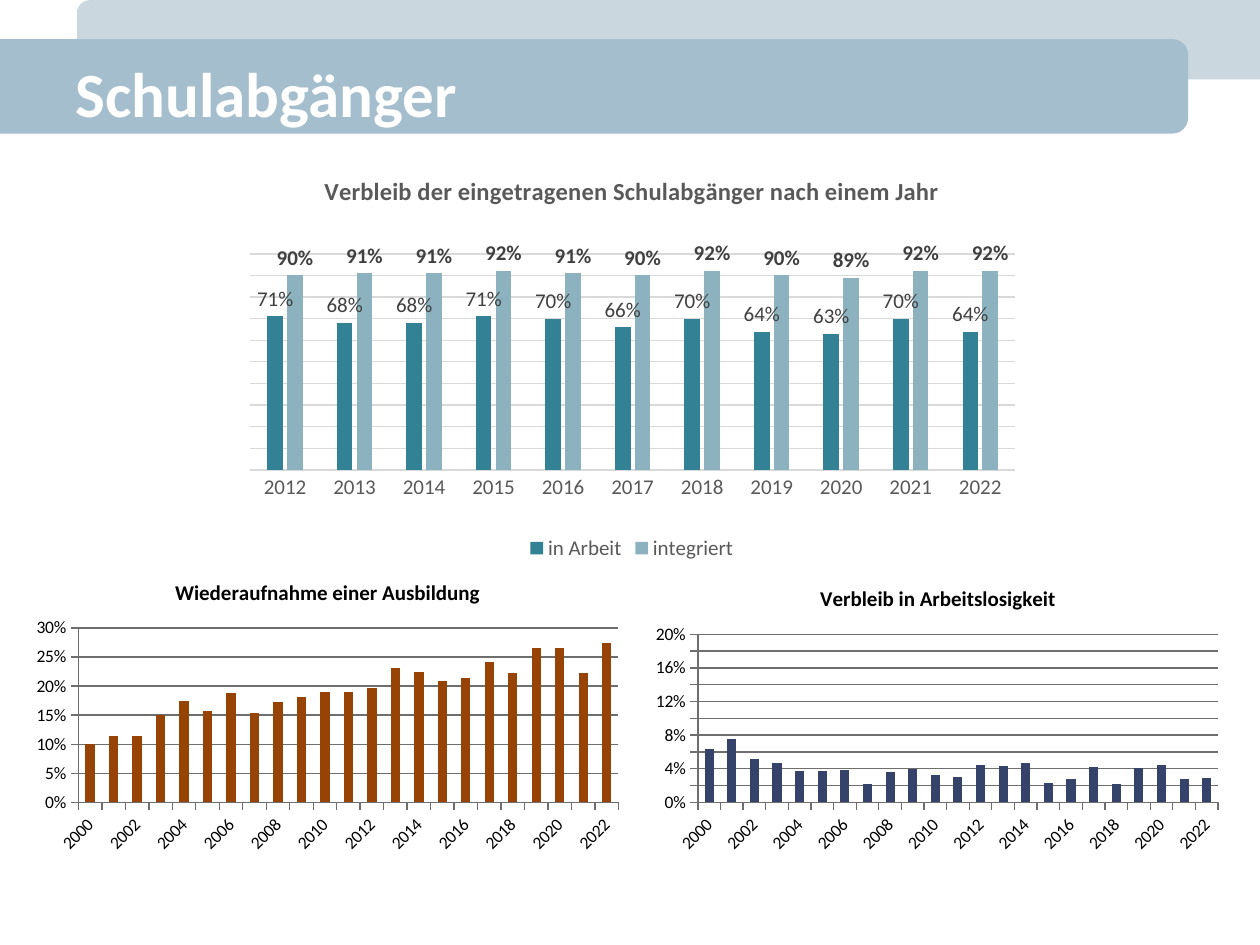
import pptx
import pptx.chart.data
import pptx.dml.color
import pptx.enum.chart
import pptx.enum.shapes
import pptx.enum.text
import pptx.oxml
import pptx.oxml.ns
import pptx.util

COLORS = {
    "banner_back": "8BA8B8", "banner_front": "A4BECD", "white": "FFFFFF",
    "black": "000000", "text": "595959", "label": "404040",
    "grid_light": "D9D9D9", "grid_dark": "6E6E6E",
    "work": "328194", "integrated": "8CB2C0", "training": "964305", "unemployed": "35436A",
}
RGB = {name: pptx.dml.color.RGBColor.from_string(value) for name, value in COLORS.items()}
FONT = "Calibri"
NAMESPACE = pptx.oxml.ns.nsdecls("c")

presentation = pptx.Presentation()
presentation.slide_width = pptx.util.Inches(10)
presentation.slide_height = pptx.util.Inches(7.5)
column = presentation.slide_width / 100
row = presentation.slide_height / 100
slide = presentation.slides.add_slide(presentation.slide_layouts[5])


def write_text(text_frame, text, size, color, bold=True):
    text_frame.text = text
    paragraph = text_frame.paragraphs[0]
    font = paragraph.runs[0].font
    font.name, font.size, font.bold = FONT, pptx.util.Pt(size), bold
    font.color.rgb = RGB[color]
    return paragraph


def add_column_chart(place, plot_place, title, title_size, text_size, text_color, grid_color,
                     years, series_list, gap, overlap, maximum, unit):
    data = pptx.chart.data.CategoryChartData(number_format="0%")
    data.categories = [str(year) for year in years]
    for name, values, fill in series_list:
        data.add_series(name, values)
    left, top, width, height = place
    chart = slide.shapes.add_chart(
        pptx.enum.chart.XL_CHART_TYPE.COLUMN_CLUSTERED,
        int(left * column), int(top * row), int(width * column), int(height * row), data).chart
    chart.font.name, chart.font.size = FONT, pptx.util.Pt(text_size)
    chart.font.color.rgb = RGB[text_color]
    chart.has_legend = False
    chart.has_title = True
    write_text(chart.chart_title.text_frame, title, title_size, text_color)
    chart.chart_title.include_in_layout = False
    plot = chart.plots[0]
    plot.vary_by_categories = False
    plot.gap_width, plot.overlap = gap, overlap
    for series, (name, values, fill) in zip(plot.series, series_list):
        series.format.fill.solid()
        series.format.fill.fore_color.rgb = RGB[fill]
    axis = chart.value_axis
    axis.minimum_scale, axis.maximum_scale, axis.major_unit = 0, maximum, unit
    axis.has_major_gridlines = True
    axis.tick_labels.number_format = "0%"
    axis.tick_labels.number_format_is_linked = False
    for line in (axis.major_gridlines.format.line, axis.format.line, chart.category_axis.format.line):
        line.color.rgb = RGB[grid_color]
        line.width = pptx.util.Pt(0.75)
    edges = "".join(f'<c:{tag} val="{share / 100}"/>' for tag, share in zip("xywh", plot_place))
    layout = pptx.oxml.parse_xml(
        f'<c:layout {NAMESPACE}><c:manualLayout><c:layoutTarget val="inner"/>'
        f'<c:xMode val="edge"/><c:yMode val="edge"/>{edges}</c:manualLayout></c:layout>')
    plot_area = chart._chartSpace.chart.plotArea
    for old_layout in plot_area.findall(pptx.oxml.ns.qn("c:layout")):
        plot_area.remove(old_layout)
    plot_area.insert(0, layout)
    return chart


for left, top, width, height, rotation, fill, opacity in (
        (50, -58.53, 6.3, 125.47, 270, "banner_back", 45),
        (43.4, -53.73, 7.5, 125.73, 90, "banner_front", 100)):
    banner = slide.shapes.add_shape(
        pptx.enum.shapes.MSO_SHAPE.ROUND_2_SAME_RECTANGLE,
        int(left * column), int(top * row), int(width * column), int(height * row))
    banner.rotation = rotation
    banner.shadow.inherit = False
    banner.line.fill.background()
    banner.fill.solid()
    banner.fill.fore_color.rgb = RGB[fill]
    if opacity < 100:
        color_element = banner._element.spPr.find(".//" + pptx.oxml.ns.qn("a:srgbClr"))
        color_element.append(pptx.oxml.parse_xml(
            f'<a:alpha {pptx.oxml.ns.nsdecls("a")} val="{opacity * 1000}"/>'))

title = slide.shapes.title
slide.shapes._spTree.append(title._element)
title.left, title.top = int(5 * column), int(4 * row)
title.width, title.height = int(90 * column), int(11.6 * row)
title.text_frame.vertical_anchor = pptx.enum.text.MSO_ANCHOR.MIDDLE
heading = write_text(title.text_frame, "Schulabgänger", 36, "white")
heading.alignment = pptx.enum.text.PP_ALIGN.LEFT

training = [0.1, 0.115, 0.114, 0.15, 0.175, 0.157, 0.188, 0.153, 0.173, 0.182, 0.19, 0.19,
            0.196, 0.231, 0.225, 0.208, 0.214, 0.242, 0.222, 0.265, 0.266, 0.222, 0.275]
unemployed = [0.063, 0.075, 0.052, 0.047, 0.037, 0.037, 0.039, 0.022, 0.036, 0.04, 0.033, 0.03,
              0.045, 0.043, 0.047, 0.023, 0.028, 0.042, 0.022, 0.041, 0.044, 0.028, 0.029]
for place, plot_place, chart_title, values, fill, maximum, unit in (
        ((2, 59.47, 48, 31.47), (8.8, 22.2, 89.3, 58.7),
         "Wiederaufnahme einer Ausbildung", training, "training", 0.3, 0.05),
        ((51.2, 60.13, 46.5, 30.8), (9, 22.7, 88.8, 57.8),
         "Verbleib in Arbeitslosigkeit", unemployed, "unemployed", 0.2, 0.02)):
    chart = add_column_chart(place, plot_place, chart_title, 12, 10, "black", "grid_dark",
                             range(2000, 2023), [("Series 1", values, fill)],
                             150, 0, maximum, unit)
    axis = chart.category_axis
    axis.tick_labels.font.size = pptx.util.Pt(10)
    axis_element = axis._element
    axis_element.find(".//" + pptx.oxml.ns.qn("a:bodyPr")).set("rot", "-2700000")
    axis_element.find(pptx.oxml.ns.qn("c:noMultiLvlLbl")).addprevious(
        pptx.oxml.parse_xml(f'<c:tickLblSkip {NAMESPACE} val="2"/>'))

work = [0.71, 0.68, 0.68, 0.71, 0.7, 0.66, 0.7, 0.64, 0.63, 0.7, 0.64]
integrated = [0.9, 0.91, 0.91, 0.92, 0.91, 0.9, 0.92, 0.9, 0.89, 0.92, 0.92]
chart = add_column_chart((18, 16.4, 64.3, 43.47), (2.9, 24.1, 94.4, 52.6),
                         "Verbleib der eingetragenen Schulabgänger nach einem Jahr", 14,
                         12, "text", "grid_light", range(2012, 2023),
                         [("in Arbeit", work, "work"), ("integriert", integrated, "integrated")],
                         219, -27, 1, 0.1)
chart.has_legend = True
chart.legend.position = pptx.enum.chart.XL_LEGEND_POSITION.BOTTOM
chart.legend.include_in_layout = False
chart.category_axis.major_tick_mark = pptx.enum.chart.XL_TICK_MARK.NONE
chart.value_axis.major_tick_mark = pptx.enum.chart.XL_TICK_MARK.NONE
chart.value_axis.tick_label_position = pptx.enum.chart.XL_TICK_LABEL_POSITION.NONE
chart.value_axis.format.line.fill.background()
for series, bold in zip(chart.plots[0].series, (False, True)):
    labels = series.data_labels
    labels.show_value = True
    labels.number_format, labels.number_format_is_linked = "0%", False
    labels.position = pptx.enum.chart.XL_LABEL_POSITION.OUTSIDE_END
    labels.font.name, labels.font.size, labels.font.bold = FONT, pptx.util.Pt(12), bold
    labels.font.color.rgb = RGB["label"]

presentation.save("out.pptx")
